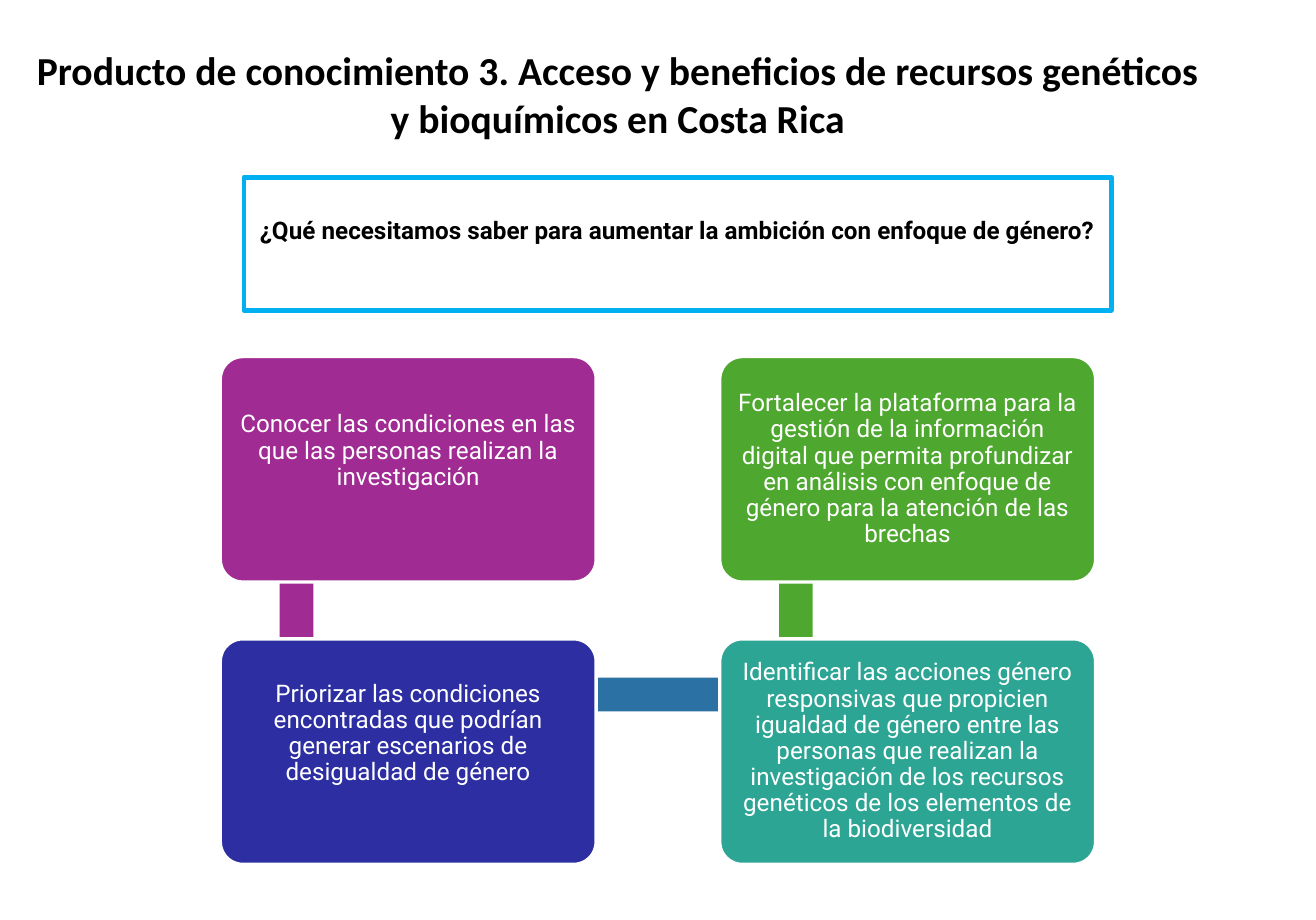
"""Builds a slide on access to genetic resources with four linked cards."""
from pptx import Presentation
from pptx.dml.color import RGBColor
from pptx.enum.shapes import MSO_SHAPE
from pptx.enum.text import MSO_ANCHOR, MSO_AUTO_SIZE, PP_ALIGN
from pptx.util import Cm, Pt

BLACK = RGBColor(0x00, 0x00, 0x00)
WHITE = RGBColor(0xFF, 0xFF, 0xFF)
SKY = RGBColor(0x00, 0xB0, 0xF0)
PURPLE = RGBColor(0xA0, 0x2B, 0x93)
NAVY = RGBColor(0x2C, 0x2E, 0xA2)
BLUE = RGBColor(0x2C, 0x71, 0xA4)
TEAL = RGBColor(0x2D, 0xA5, 0x94)
GREEN = RGBColor(0x4E, 0xA7, 0x2E)

CARD_W, CARD_H = 6.02, 3.61
COLUMNS = [3.53, 11.53]
ROWS = [5.71, 10.23]
BAR = 0.54
BAR_INSET = 0.95
BAR_TOP, BAR_H = 6.62, 4.47

CARDS = [
    (0, 0, PURPLE, 0.71, "Conocer las condiciones en las que las personas "
     "realizan la investigación"),
    (0, 1, NAVY, 0.71, "Priorizar las condiciones encontradas que podrían "
     "generar escenarios de desigualdad de género"),
    (1, 1, TEAL, 0.13, "Identificar las acciones género responsivas que "
     "propicien igualdad de género entre las personas que realizan la "
     "investigación de los recursos genéticos de los elementos de la "
     "biodiversidad"),
    (1, 0, GREEN, 0.13, "Fortalecer la plataforma para la gestión de la "
     "información digital que permita profundizar en análisis con enfoque "
     "de género para la atención de las brechas"),
]


class SlideBuilder:
    """Holds the slide and its text style."""

    def __init__(self, s, font="Roboto", size=11):
        self.s = s
        self.font = font
        self.size = size

    def set_text(self, sp, text, color, font=None, size=None, bold=False,
                 anchor=MSO_ANCHOR.TOP, insets=(0.25, 0.13, 0.25, 0.13)):
        """Fill a shape with one centred paragraph and return it."""
        tf = sp.text_frame
        tf.word_wrap = True
        tf.auto_size = MSO_AUTO_SIZE.NONE
        tf.vertical_anchor = anchor
        (tf.margin_left, tf.margin_top,
         tf.margin_right, tf.margin_bottom) = map(Cm, insets)
        p = tf.paragraphs[0]
        p.text = text
        p.alignment = PP_ALIGN.CENTER
        p.font.name = font or self.font
        p.font.size = Pt(size or self.size)
        p.font.bold = bold
        p.font.color.rgb = color
        return p

    def title(self, text, x, y, w, h):
        """Place and format the title placeholder."""
        sp = self.s.shapes.title
        sp.left, sp.top, sp.width, sp.height = map(Cm, (x, y, w, h))
        self.set_text(sp, text, BLACK, font="Calibri", size=18, bold=True)

    def box(self, kind, x, y, w, h, fill=None, line=None, weight=1.5):
        """Add a preset shape with optional fill and outline."""
        sp = self.s.shapes.add_shape(kind, Cm(x), Cm(y), Cm(w), Cm(h))
        sp.shadow.inherit = False
        if fill is None:
            sp.fill.background()
        else:
            sp.fill.solid()
            sp.fill.fore_color.rgb = fill
        if line is None:
            sp.line.fill.background()
        else:
            sp.line.color.rgb = line
            sp.line.width = Pt(weight)
        return sp

    def question(self, text, x, y, w, h):
        """Add the outlined question box."""
        sp = self.box(MSO_SHAPE.RECTANGLE, x, y, w, h, line=SKY, weight=2.25)
        self.set_text(sp, text, BLACK, bold=True, insets=(0.1, 0.6, 0.1, 0.13))

    def bar(self, x, y, w, h, fill):
        """Add a plain bar that links two cards."""
        self.box(MSO_SHAPE.RECTANGLE, x, y, w, h, fill=fill)

    def card(self, col, row, fill, bottom, text):
        """Add a rounded card at a grid position."""
        sp = self.box(MSO_SHAPE.ROUNDED_RECTANGLE, COLUMNS[col], ROWS[row],
                      CARD_W, CARD_H, fill=fill, line=WHITE)
        sp.adjustments[0] = 0.1
        p = self.set_text(sp, text, WHITE, anchor=MSO_ANCHOR.MIDDLE,
                          insets=(0.13, 0.13, 0.13, bottom))
        p.line_spacing = 0.9


def main():
    """Build the slide and save it."""
    prs = Presentation()
    prs.slide_width, prs.slide_height = Cm(21.08), Cm(14.73)
    s = prs.slides.add_slide(prs.slide_layouts[5])
    b = SlideBuilder(s)
    b.title("Producto de conocimiento 3. Acceso y beneficios de recursos "
            "genéticos y bioquímicos en Costa Rica", 0.25, 0.61, 19.3, 1.8)
    b.question("¿Qué necesitamos saber para aumentar la ambición con enfoque "
               "de género?", 3.91, 2.84, 13.89, 2.13)
    for x, color in zip(COLUMNS, (PURPLE, GREEN)):
        b.bar(x + BAR_INSET, BAR_TOP, BAR, BAR_H, color)
    b.bar(4.78, 10.85, 7.98, BAR, BLUE)
    for card in CARDS:
        b.card(*card)
    prs.save("out.pptx")


if __name__ == "__main__":
    main()
